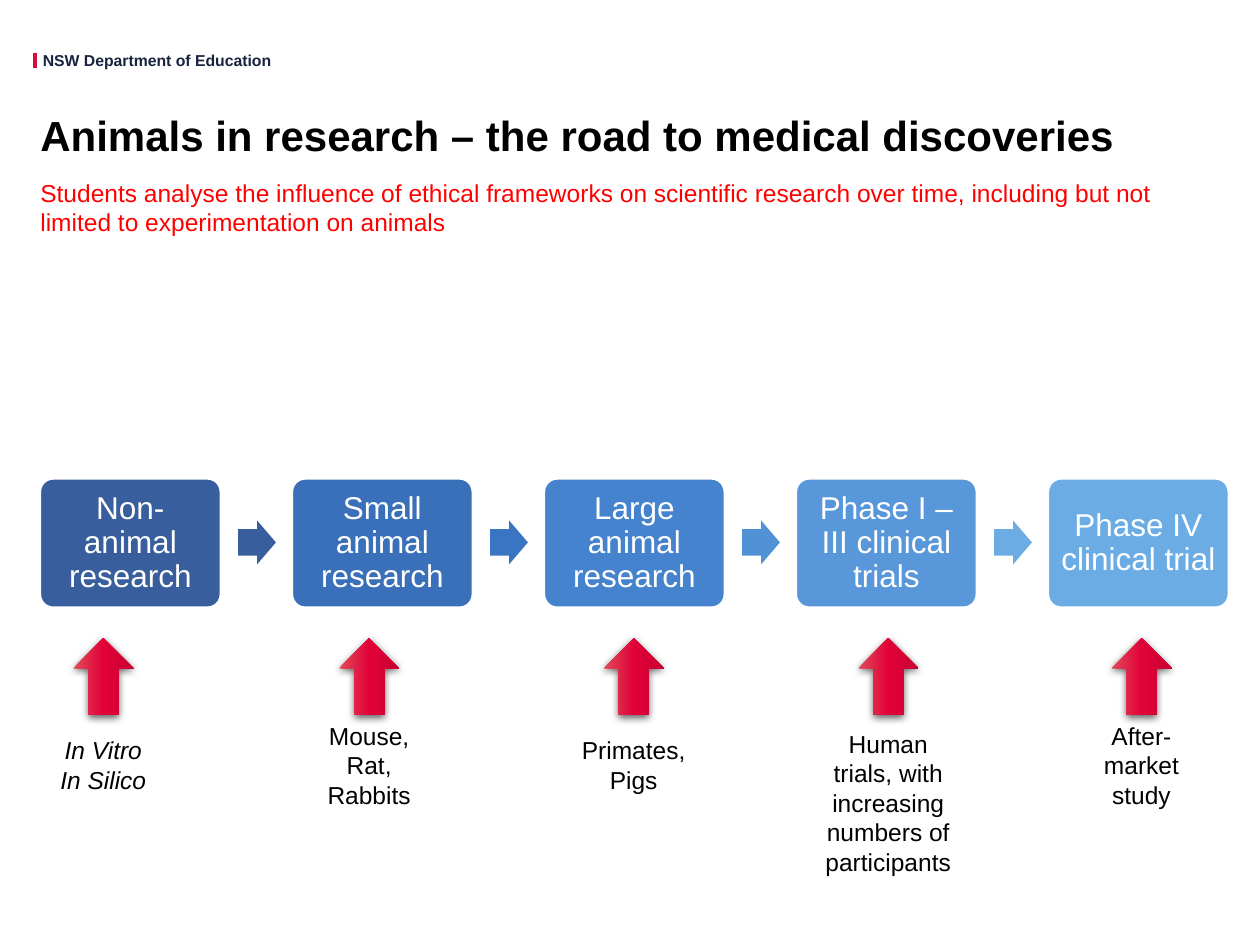
from lxml.etree import SubElement
from pptx import Presentation
from pptx.dml.color import RGBColor
from pptx.enum.shapes import MSO_CONNECTOR as Link, MSO_SHAPE as Shape
from pptx.enum.text import MSO_ANCHOR as Anchor, MSO_AUTO_SIZE as Fit, PP_ALIGN as Align
from pptx.oxml import parse_xml
from pptx.oxml.ns import nsdecls, qn
from pptx.util import Inches, Pt

BLACK = RGBColor(0x00, 0x00, 0x00)
WHITE = RGBColor(0xFF, 0xFF, 0xFF)
RED = RGBColor(0xFF, 0x00, 0x00)
CRIMSON = RGBColor(0xD7, 0x0C, 0x3D)
NAVY = RGBColor(0x19, 0x23, 0x3E)
STAGE_FILLS = [RGBColor(0x38, 0x5E, 0x9D), RGBColor(0x3A, 0x6F, 0xBA), RGBColor(0x45, 0x83, 0xCE),
               RGBColor(0x58, 0x98, 0xDA), RGBColor(0x6C, 0xAC, 0xE4)]
STEP_FILLS = [RGBColor(0x38, 0x5E, 0x9D), RGBColor(0x3A, 0x75, 0xC4),
              RGBColor(0x51, 0x91, 0xD6), RGBColor(0x6C, 0xAC, 0xE4)]
POINTER_STOPS = [(0, RGBColor(0xE1, 0x4B, 0x5B)), (50, RGBColor(0xE1, 0x02, 0x38)),
                 (100, RGBColor(0xCA, 0x00, 0x31))]

COLUMNS, ROWS = 100, 75
MARGIN, PITCH = 3.2, 20

STAGES = ["Non-animal research", "Small animal research", "Large animal research",
          "Phase I – III clinical trials", "Phase IV clinical trial"]
EXAMPLES = [(8.2, 6.4, "In Vitro\nIn Silico"), (29.3, 6.4, "Mouse, Rat, Rabbits"),
            (50.3, 6.4, "Primates, Pigs"),
            (70.5, 12.4, "Human trials, with increasing numbers of participants"),
            (90.6, 6.4, "After-market study")]


def write(frame, text, size=14, color=BLACK, bold=False, italic=False, align=Align.LEFT,
          anchor=Anchor.MIDDLE, insets=(0, 0, 0, 0), spacing=1.0, after=0, wrap=True, font="Arial"):
    """Fill a text frame with one paragraph per line of text."""
    frame.auto_size, frame.word_wrap, frame.vertical_anchor = Fit.NONE, wrap, anchor
    (frame.margin_left, frame.margin_top,
     frame.margin_right, frame.margin_bottom) = map(Inches, insets)
    frame.text = text
    for paragraph in frame.paragraphs:
        properties = paragraph._p.get_or_add_pPr()
        properties.set("marL", "0")
        properties.set("indent", "0")
        SubElement(properties, qn("a:buNone"))
        paragraph.alignment, paragraph.line_spacing = align, spacing
        paragraph.space_before, paragraph.space_after = Pt(0), Pt(after)
        for run in paragraph.runs:
            run.font.name, run.font.size = font, Pt(size)
            run.font.bold, run.font.italic = bold, italic
            run.font.color.rgb = color


class ResearchSlide:
    """Current slide, its grid and the look of each kind of element."""

    def __init__(self, deck):
        self.cell_width = deck.slide_width / COLUMNS
        self.cell_height = deck.slide_height / ROWS
        self.slide = deck.slides.add_slide(deck.slide_layouts[1])

    def place(self, column, row, width, height):
        """Turn grid cells into slide lengths."""
        return (round(column * self.cell_width), round(row * self.cell_height),
                round(width * self.cell_width), round(height * self.cell_height))

    def placeholder(self, index, text, area, **style):
        """Move and fill a placeholder of the layout."""
        holder = self.slide.placeholders[index]
        holder.left, holder.top, holder.width, holder.height = self.place(*area)
        write(holder.text_frame, text, **style)

    def label(self, text, area, **style):
        """Add a plain text box."""
        write(self.slide.shapes.add_textbox(*self.place(*area)).text_frame, text, **style)

    def rule(self, column, row, height):
        """Add the upright accent line."""
        left, top, _, length = self.place(column, row, 0, height)
        accent = self.slide.shapes.add_connector(Link.STRAIGHT, left, top, left, top + length)
        accent.line.color.rgb, accent.line.width = CRIMSON, Pt(2.5)
        SubElement(accent._element.spPr, qn("a:effectLst"))

    def shape(self, kind, area, fill):
        """Add a flat preset shape without outline."""
        figure = self.slide.shapes.add_shape(kind, *self.place(*area))
        figure.shadow.inherit = False
        figure.fill.solid()
        figure.fill.fore_color.rgb = fill
        figure.line.fill.background()
        return figure

    def stage(self, text, column, fill):
        """Add a rounded box for one research stage."""
        box = self.shape(Shape.ROUNDED_RECTANGLE, (column, 38, 14.3, 10.2), fill)
        box.adjustments[0] = 0.1
        box.line.color.rgb, box.line.width = WHITE, Pt(1)
        write(box.text_frame, text, size=18, color=WHITE, align=Align.CENTER,
              insets=(0.07,) * 4, spacing=0.9)

    def step(self, column, fill):
        """Add the arrow that leads to the next stage."""
        arrow = self.shape(Shape.RIGHT_ARROW, (column, 41.3, 3, 3.5), fill)
        arrow.adjustments[0], arrow.adjustments[1] = 0.6, 0.5

    def pointer(self, center):
        """Add a shaded arrow pointing up at a stage."""
        arrow = self.shape(Shape.RIGHT_ARROW, (center - 3.05, 51.3, 6.1, 4.8), CRIMSON)
        arrow.rotation = 270
        stops = "".join(f'<a:gs pos="{share * 1000}"><a:srgbClr val="{color}"/></a:gs>'
                        for share, color in POINTER_STOPS)
        properties = arrow._element.spPr
        properties.replace(properties.find(qn("a:solidFill")), parse_xml(
            f'<a:gradFill {nsdecls("a")} rotWithShape="1"><a:gsLst>{stops}</a:gsLst>'
            '<a:lin ang="5400000" scaled="0"/></a:gradFill>'))
        properties.replace(properties.find(qn("a:effectLst")), parse_xml(
            f'<a:effectLst {nsdecls("a")}><a:outerShdw blurRad="{Pt(4.5)}" dist="{Pt(1.5)}" '
            'dir="5400000" algn="ctr" rotWithShape="0"><a:srgbClr val="000000">'
            '<a:alpha val="63000"/></a:srgbClr></a:outerShdw></a:effectLst>'))


def main():
    """Build the slide on the road to medical discoveries."""
    deck = Presentation()
    deck.slide_width, deck.slide_height = Inches(10), Inches(7.5)
    page = ResearchSlide(deck)

    page.rule(2.8, 4.2, 1.2)
    page.label("NSW Department of Education", (3.4, 4, 18.3, 1.5),
               size=9, color=NAVY, bold=True, anchor=Anchor.TOP, wrap=False)
    page.placeholder(0, "Animals in research – the road to medical discoveries",
                     (MARGIN, 8.2, 94.3, 5.5), size=24, bold=True, spacing=0.9)
    page.placeholder(1, "Students analyse the influence of ethical frameworks on scientific research "
                     "over time, including but not limited to experimentation on animals",
                     (MARGIN, 13.6, 94.4, 5.3), color=RED, anchor=Anchor.TOP,
                     insets=(0, 0.05, 0.1, 0.05), after=4.5)

    for index, (stage, fill) in enumerate(zip(STAGES, STAGE_FILLS)):
        page.stage(stage, MARGIN + index * PITCH, fill)
    for index, fill in enumerate(STEP_FILLS):
        page.step(MARGIN + 15.7 + index * PITCH, fill)
    for index, (center, height, example) in enumerate(EXAMPLES):
        page.label(example, (center - 5, 57.5, 10, height),
                   align=Align.CENTER, italic=index == 0)
        page.pointer(center)

    deck.save("out.pptx")


if __name__ == "__main__":
    main()
